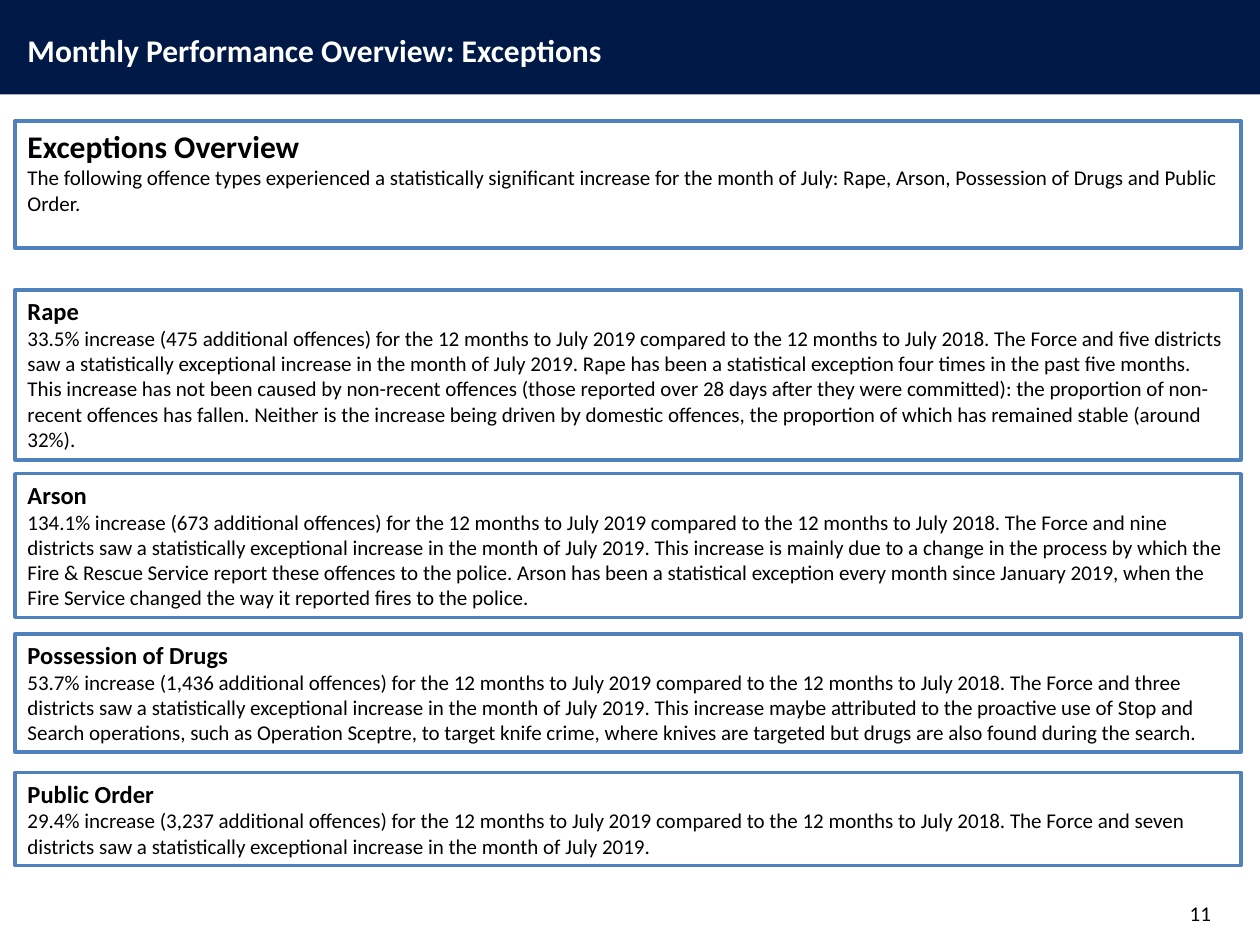
import pptx
import pptx.util
import pptx.dml.color
import pptx.enum.shapes
import pptx.enum.text

COLORS = {"navy": "001947", "blue": "4F81BD", "white": "FFFFFF", "black": "000000"}
ANCHOR = pptx.enum.text.MSO_ANCHOR
ALIGN = pptx.enum.text.PP_ALIGN

prs = pptx.Presentation()
prs.slide_width = pptx.util.Inches(10)
prs.slide_height = pptx.util.Inches(7.5)
s = prs.slides.add_slide(prs.slide_layouts[6])

# Grid of 100 columns by 100 rows
COL, ROW = prs.slide_width / 100, prs.slide_height / 100
LEFT, BOX_WIDTH = 1.2, 97.3


def add_box(left, top, width, height, fill=None, line=None):
    sp = s.shapes.add_shape(
        pptx.enum.shapes.MSO_SHAPE.RECTANGLE,
        round(left * COL), round(top * ROW), round(width * COL), round(height * ROW))
    sp.shadow.inherit = False
    for fmt, color in ((sp.fill, fill), (sp.line.fill, line)):
        if color:
            fmt.solid()
            fmt.fore_color.rgb = pptx.dml.color.RGBColor.from_string(COLORS[color])
        else:
            fmt.background()
    if line:
        sp.line.width = pptx.util.Pt(2)
    return sp


def write(sp, lines, color="black", align=ALIGN.LEFT, anchor=ANCHOR.TOP):
    tf = sp.text_frame
    tf.word_wrap = True
    tf.vertical_anchor = anchor
    for i, (text, size, bold) in enumerate(lines):
        p = tf.add_paragraph() if i else tf.paragraphs[0]
        p.alignment = align
        r = p.add_run()
        r.text = text
        values = {"name": "Calibri", "size": pptx.util.Pt(size), "bold": bold}
        for key, value in values.items():
            setattr(r.font, key, value)
        r.font.color.rgb = pptx.dml.color.RGBColor.from_string(COLORS[color])


# Header band, title and page number
add_box(0, 0, 100, 10, fill="navy")
write(add_box(LEFT, 2.67, 78.7, 5.33),
      [("Monthly Performance Overview: Exceptions", 18, True)], color="white")
write(add_box(73.8, 94, 23.3, 5.33), [("11", 12, False)],
      align=ALIGN.RIGHT, anchor=ANCHOR.MIDDLE)

# Exception panels: top row, row count, heading size, heading, body
PERIOD = "for the 12 months to July 2019 compared to the 12 months to July 2018."
RISE = "districts saw a statistically exceptional increase in the month of July 2019."
panels = [
    (12.8, 13.47, 18, "Exceptions Overview",
     "The following offence types experienced a statistically significant increase for "
     "the month of July: Rape, Arson, Possession of Drugs and Public Order."),
    (30.67, 18, 14, "Rape",
     f"33.5% increase (475 additional offences) {PERIOD} The Force and five {RISE} "
     "Rape has been a statistical exception four times in the past five months. "
     "This increase has not been caused by non-recent offences (those reported over "
     "28 days after they were committed): the proportion of non-recent offences has "
     "fallen. Neither is the increase being driven by domestic offences, the "
     "proportion of which has remained stable (around 32%)."),
    (50.13, 15.2, 14, "Arson",
     f"134.1% increase (673 additional offences) {PERIOD} The Force and nine {RISE} "
     "This increase is mainly due to a change in the process by which the Fire & "
     "Rescue Service report these offences to the police. Arson has been a "
     "statistical exception every month since January 2019, when the Fire Service "
     "changed the way it reported fires to the police."),
    (67.07, 12.53, 14, "Possession of Drugs",
     f"53.7% increase (1,436 additional offences) {PERIOD} The Force and three {RISE} "
     "This increase maybe attributed to the proactive use of Stop and Search "
     "operations, such as Operation Sceptre, to target knife crime, where knives are "
     "targeted but drugs are also found during the search."),
    (81.73, 9.87, 14, "Public Order",
     f"29.4% increase (3,237 additional offences) {PERIOD} The Force and seven {RISE}"),
]
for top, height, size, heading, body in panels:
    sp = add_box(LEFT, top, BOX_WIDTH, height, fill="white", line="blue")
    write(sp, [(heading, size, True), (body, 12, False)])

prs.save("out.pptx")
